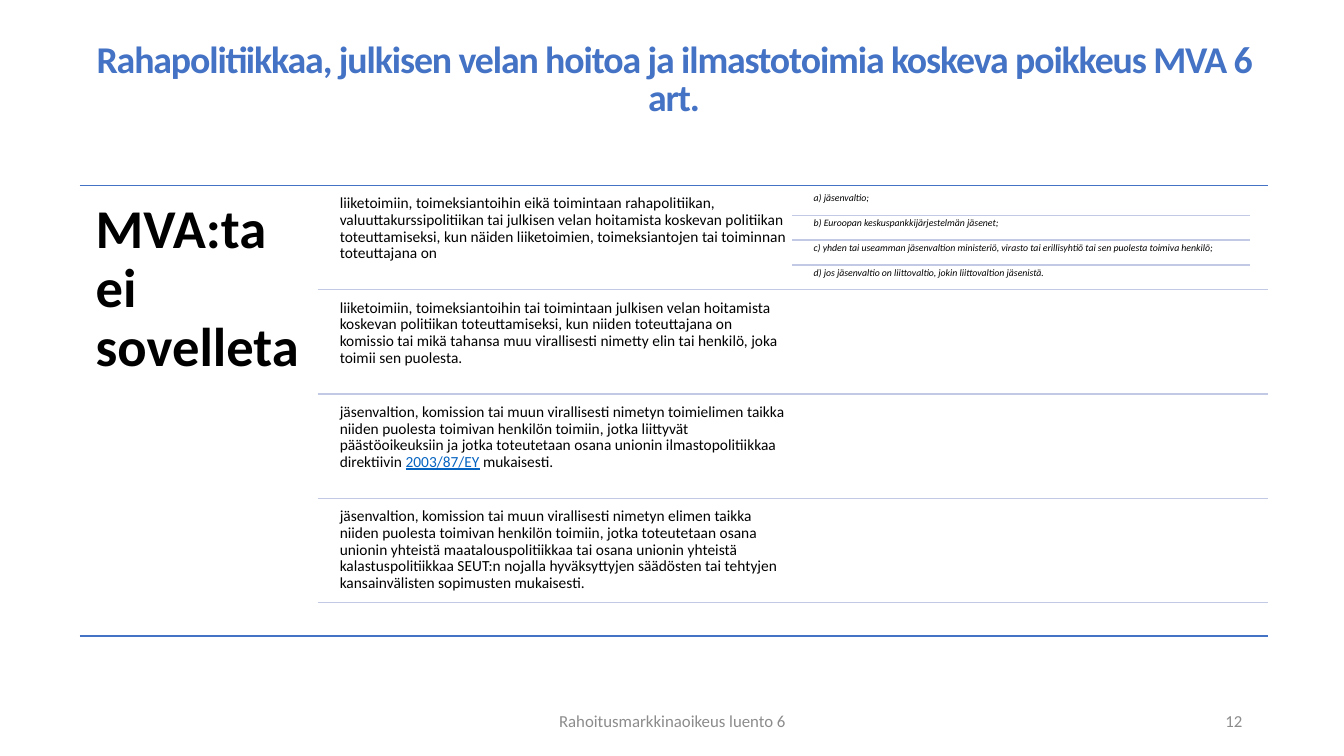
from dataclasses import dataclass
from typing import Optional

from lxml import etree
from pptx import Presentation
from pptx import util as u
from pptx.dml.color import RGBColor
from pptx.enum import shapes, text
from pptx.oxml.ns import qn


@dataclass(frozen=True)
class Theme:
    font: str = "Calibri"
    blue: str = "4472C4"
    pale: str = "C1C9E4"
    link: str = "0563C1"
    black: str = "000000"
    grey: str = "8C8C8C"
    title: float = 27
    heading: float = 39
    body: float = 11
    detail: float = 7
    footer: float = 12


@dataclass(frozen=True)
class Box:
    left: float
    top: float
    width: float
    height: float


@dataclass(frozen=True)
class Exemption:
    text: str
    reference: str = ""
    ending: str = ""


T = Theme()
LEFT, RIGHT = 0.79, 12.58
TABLE_TOP, ROW_PITCH = 1.84, 1.035
ROW_LEFT, ROW_TEXT_LEFT = 3.15, 3.32
DETAIL_LEFT, DETAIL_TEXT_LEFT = 7.86, 8.04
TEXT_WIDTH, GAP = 4.54, 0.05

TITLE = "Rahapolitiikkaa, julkisen velan hoitoa ja ilmastotoimia koskeva poikkeus MVA 6 art."
EXEMPTIONS = [
    Exemption("liiketoimiin, toimeksiantoihin eikä toimintaan rahapolitiikan, "
              "valuuttakurssipolitiikan tai julkisen velan hoitamista koskevan politiikan "
              "toteuttamiseksi, kun näiden liiketoimien, toimeksiantojen tai toiminnan "
              "toteuttajana on"),
    Exemption("liiketoimiin, toimeksiantoihin tai toimintaan julkisen velan hoitamista "
              "koskevan politiikan toteuttamiseksi, kun niiden toteuttajana on komissio tai "
              "mikä tahansa muu virallisesti nimetty elin tai henkilö, joka toimii sen puolesta."),
    Exemption("jäsenvaltion, komission tai muun virallisesti nimetyn toimielimen taikka niiden "
              "puolesta toimivan henkilön toimiin, jotka liittyvät päästöoikeuksiin ja jotka "
              "toteutetaan osana unionin ilmastopolitiikkaa direktiivin ",
              "2003/87/EY", " mukaisesti."),
    Exemption("jäsenvaltion, komission tai muun virallisesti nimetyn elimen taikka niiden "
              "puolesta toimivan henkilön toimiin, jotka toteutetaan osana unionin yhteistä "
              "maatalouspolitiikkaa tai osana unionin yhteistä kalastuspolitiikkaa SEUT:n nojalla "
              "hyväksyttyjen säädösten tai tehtyjen kansainvälisten sopimusten mukaisesti."),
]
ACTORS = [
    "a) jäsenvaltio;",
    "b) Euroopan keskuspankkijärjestelmän jäsenet;",
    "c) yhden tai useamman jäsenvaltion ministeriö, virasto tai erillisyhtiö tai sen "
    "puolesta toimiva henkilö;",
    "d) jos jäsenvaltio on liittovaltio, jokin liittovaltion jäsenistä.",
]


def add_run(p, content: str, *, size: float, color: str = T.black, bold: bool = False,
            italic: bool = False, underline: bool = False, tracking: Optional[int] = None):
    r = p.add_run()
    r.text = content
    f = r.font
    f.name, f.size = T.font, u.Pt(size)
    f.bold, f.italic, f.underline = bold, italic, underline
    f.color.rgb = RGBColor.from_string(color)
    if tracking is not None:
        r._r.get_or_add_rPr().set("spc", str(tracking))


def set_frame(tf, *, inset: float = 0, side: Optional[float] = None,
              anchor=text.MSO_ANCHOR.TOP, align=text.PP_ALIGN.LEFT, spacing: float = 0.9):
    """Format a text frame and return its first paragraph."""
    tf.word_wrap = True
    tf.auto_size = text.MSO_AUTO_SIZE.NONE
    tf.vertical_anchor = anchor
    tf.margin_top = tf.margin_bottom = u.Inches(inset)
    tf.margin_left = tf.margin_right = u.Inches(inset if side is None else side)
    p = tf.paragraphs[0]
    p.alignment, p.line_spacing = align, spacing
    return p


def place(sp, box: Box) -> None:
    sp.left, sp.top = u.Inches(box.left), u.Inches(box.top)
    sp.width, sp.height = u.Inches(box.width), u.Inches(box.height)


def add_box(s, box: Box, **frame):
    sp = s.shapes.add_textbox(0, 0, 0, 0)
    place(sp, box)
    return set_frame(sp.text_frame, **frame)


def add_rule(s, left: float, right: float, y: float, color: str) -> None:
    line = s.shapes.add_connector(shapes.MSO_CONNECTOR.STRAIGHT, u.Inches(left), u.Inches(y),
                                  u.Inches(right), u.Inches(y))
    line.line.color.rgb = RGBColor.from_string(color)
    line.line.width = u.Pt(1)
    etree.SubElement(line._element.spPr, qn("a:effectLst"))


def add_title(s) -> None:
    sp = s.shapes.title
    place(sp, Box(LEFT, 0.42, RIGHT - LEFT, 1.31))
    p = set_frame(sp.text_frame, align=text.PP_ALIGN.CENTER, spacing=0.85)
    add_run(p, TITLE, size=T.title, color=T.blue, bold=True, tracking=-80)


def add_exemptions(s) -> None:
    for i, item in enumerate(EXEMPTIONS):
        top = TABLE_TOP + i * ROW_PITCH
        p = add_box(s, Box(ROW_TEXT_LEFT, top + GAP, TEXT_WIDTH, 0.99), inset=0.05)
        add_run(p, item.text, size=T.body)
        if item.reference:
            add_run(p, item.reference, size=T.body, color=T.link, underline=True)
            add_run(p, item.ending, size=T.body)
        add_rule(s, ROW_LEFT, RIGHT, top + ROW_PITCH, T.pale)


def add_actors(s) -> None:
    pitch = (ROW_PITCH - GAP) / len(ACTORS)
    for i, actor in enumerate(ACTORS):
        top = TABLE_TOP + GAP + i * pitch
        p = add_box(s, Box(DETAIL_TEXT_LEFT, top, TEXT_WIDTH, 0.25), inset=0.03)
        add_run(p, actor, size=T.detail, italic=True)
        if i:
            add_rule(s, DETAIL_LEFT, DETAIL_LEFT + TEXT_WIDTH, top, T.pale)


def add_footer(s, content: str, left: float, width: float, align) -> None:
    p = add_box(s, Box(left, 6.95, width, 0.4), inset=0.05, side=0.1,
                anchor=text.MSO_ANCHOR.MIDDLE, align=align, spacing=1.0)
    add_run(p, content, size=T.footer, color=T.grey)


def main() -> None:
    prs = Presentation()
    prs.slide_width, prs.slide_height = u.Inches(13.33), u.Inches(7.5)
    s = prs.slides.add_slide(prs.slide_layouts[5])

    # Title and the rules framing the content
    add_title(s)
    for y in (TABLE_TOP, 6.31):
        add_rule(s, LEFT, RIGHT, y, T.blue)

    # Heading column, exemption rows and the actors of the first row
    p = add_box(s, Box(LEFT, TABLE_TOP, 2.36, 4.19), inset=0.16)
    add_run(p, "MVA:ta ei sovelleta", size=T.heading, bold=True)
    add_exemptions(s)
    add_actors(s)

    # Footer
    add_footer(s, "Rahoitusmarkkinaoikeus luento 6", 4.42, 4.5, text.PP_ALIGN.CENTER)
    add_footer(s, "12", 9.42, 3, text.PP_ALIGN.RIGHT)

    prs.save("out.pptx")


if __name__ == "__main__":
    main()
